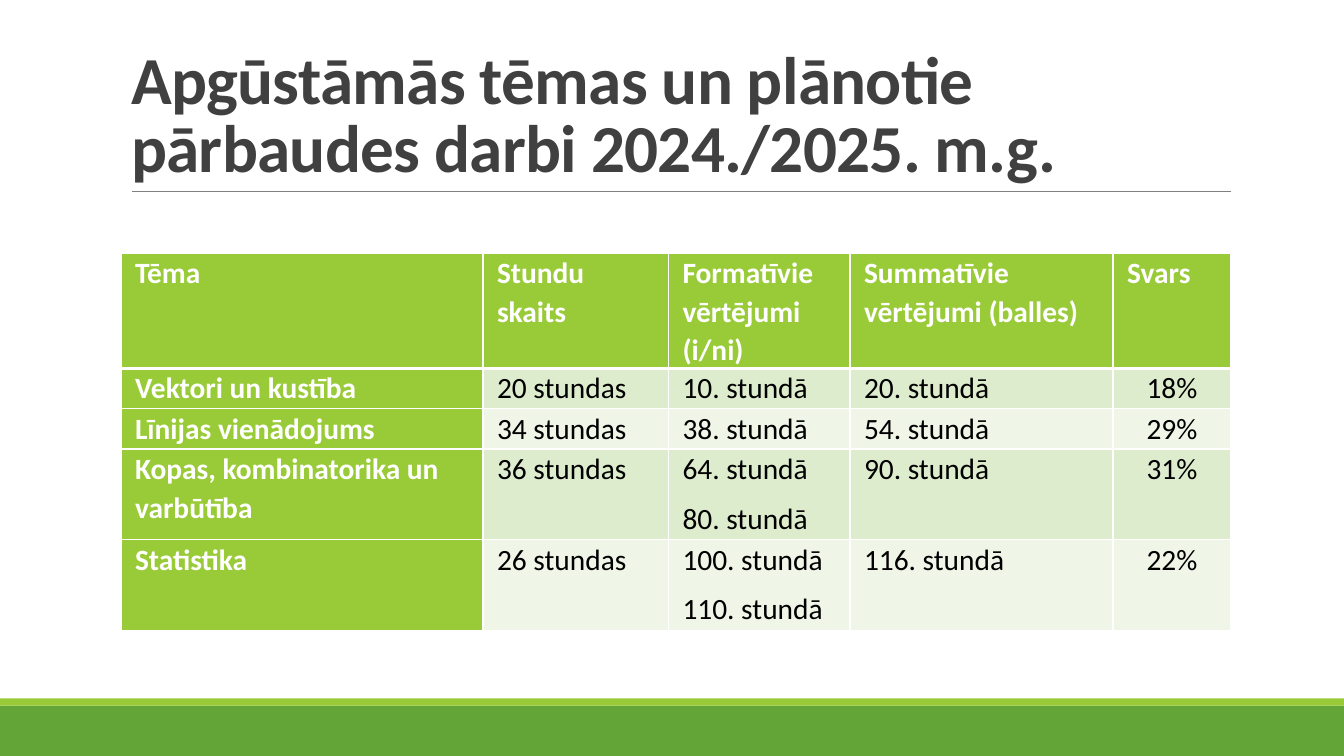
from lxml import etree
from pptx import Presentation
from pptx.dml.color import RGBColor
from pptx.enum.shapes import MSO_CONNECTOR, MSO_SHAPE
from pptx.enum.text import MSO_ANCHOR, MSO_AUTO_SIZE, PP_ALIGN
from pptx.oxml.ns import qn
from pptx.util import Inches, Pt

RECTANGLE = MSO_SHAPE.RECTANGLE
STRAIGHT = MSO_CONNECTOR.STRAIGHT
LEFT, CENTER = PP_ALIGN.LEFT, PP_ALIGN.CENTER
BOTTOM = MSO_ANCHOR.BOTTOM
NO_AUTOFIT = MSO_AUTO_SIZE.NONE

FONT = "Calibri"
WHITE, BLACK, DARK, GRAY = "FFFFFF", "000000", "404040", "808080"
LIME, GREEN = "99CB38", "63A537"
BANDS = ("DEECCE", "EFF6E8")
SLIDE_W, SLIDE_H = 13.33, 7.5

TITLE = "Apgūstāmās tēmas un plānotie pārbaudes darbi 2024./2025. m.g."
COLUMN_WIDTHS = (3.59, 1.84, 1.8, 2.61, 1.17)
ROW_HEIGHTS = (1.13, 0.4, 0.4, 0.9, 0.9)
TOPICS = (
    ("Tēma", "Stundu skaits", "Formatīvie vērtējumi (i/ni)",
     "Summatīvie vērtējumi (balles)", "Svars"),
    ("Vektori un kustība", "20 stundas", "10. stundā", "20. stundā", "18%"),
    ("Līnijas vienādojums", "34 stundas", "38. stundā", "54. stundā", "29%"),
    ("Kopas, kombinatorika un varbūtība", "36 stundas",
     "64. stundā\n80. stundā", "90. stundā", "31%"),
    ("Statistika", "26 stundas", "100. stundā\n110. stundā",
     "116. stundā", "22%"),
)


def color(value):
    return RGBColor.from_string(value)


def add_run(paragraph, text, size, ink, bold):
    run = paragraph.add_run()
    run.text = text
    run.font.name = FONT
    run.font.size = Pt(size)
    run.font.bold = bold
    run.font.color.rgb = color(ink)
    return run


def add_band(slide, left, top, width, height, fill):
    band = slide.shapes.add_shape(
        RECTANGLE, Inches(left), Inches(top), Inches(width), Inches(height))
    band.shadow.inherit = False
    band.fill.solid()
    band.fill.fore_color.rgb = color(fill)
    band.line.fill.background()


def add_footer(slide, left, top, width, height):
    stripe = 0.07
    add_band(slide, left, top + stripe, width, height - stripe, GREEN)
    add_band(slide, left, top, width, stripe, LIME)


def add_title(slide, left, top, width, height):
    # Rule under the heading
    base = Inches(top + height)
    rule = slide.shapes.add_connector(
        STRAIGHT, Inches(left + 0.11), base, Inches(left + width + 0.01), base)
    rule.line.color.rgb = color(GRAY)
    rule.line.width = Pt(0.5)
    etree.SubElement(rule._element.spPr, qn("a:effectLst"))

    # Heading
    heading = slide.shapes.title
    heading.left, heading.top = Inches(left), Inches(top)
    heading.width, heading.height = Inches(width), Inches(height)
    frame = heading.text_frame
    frame.word_wrap = True
    frame.auto_size = NO_AUTOFIT
    frame.vertical_anchor = BOTTOM
    paragraph = frame.paragraphs[0]
    paragraph.alignment = LEFT
    paragraph.line_spacing = 0.85
    run = add_run(paragraph, TITLE, 48, DARK, True)
    run.font._element.set("spc", "-50")


def set_borders(cell, widths):
    properties = cell._tc.get_or_add_tcPr()
    for index, (side, width) in enumerate(widths.items()):
        border = etree.Element(qn("a:ln" + side), w=str(Pt(width)))
        fill = etree.SubElement(border, qn("a:solidFill"))
        etree.SubElement(fill, qn("a:srgbClr"), val=WHITE)
        properties.insert(index, border)


def fill_cell(cell, text, row, column):
    strong = row == 0 or column == 0
    cell.margin_left = cell.margin_right = Inches(0.14)
    cell.margin_top = cell.margin_bottom = 0
    cell.fill.solid()
    cell.fill.fore_color.rgb = color(LIME if strong else BANDS[(row - 1) % 2])
    set_borders(cell, {"L": 1, "R": 1, "T": 3 if row == 1 else 1,
                       "B": 3 if row == 0 else 1})
    frame = cell.text_frame
    for index, line in enumerate(text.split("\n")):
        paragraph = frame.add_paragraph() if index else frame.paragraphs[0]
        paragraph.alignment = CENTER if row and column == 4 else LEFT
        paragraph.line_spacing = 1.07
        paragraph.space_after = Pt(8)
        add_run(paragraph, line, 21, WHITE if strong else BLACK, strong)


def add_topics(slide, left, top, width, height):
    table = slide.shapes.add_table(
        len(TOPICS), len(COLUMN_WIDTHS), Inches(left), Inches(top),
        Inches(width), Inches(height)).table
    table.first_col = True
    for column, column_width in zip(table.columns, COLUMN_WIDTHS):
        column.width = Inches(column_width)
    for row, row_height in zip(table.rows, ROW_HEIGHTS):
        row.height = Inches(row_height)
    for row, texts in enumerate(TOPICS):
        for column, text in enumerate(texts):
            fill_cell(table.cell(row, column), text, row, column)


def main():
    deck = Presentation()
    deck.slide_width, deck.slide_height = Inches(SLIDE_W), Inches(SLIDE_H)
    slide = deck.slides.add_slide(deck.slide_layouts[5])
    add_footer(slide, 0, 6.93, SLIDE_W, 0.57)
    add_title(slide, 1.2, 0.31, 11, 1.59)
    add_topics(slide, 1.2, 2.51, sum(COLUMN_WIDTHS), sum(ROW_HEIGHTS))
    deck.save("out.pptx")


if __name__ == "__main__":
    main()
